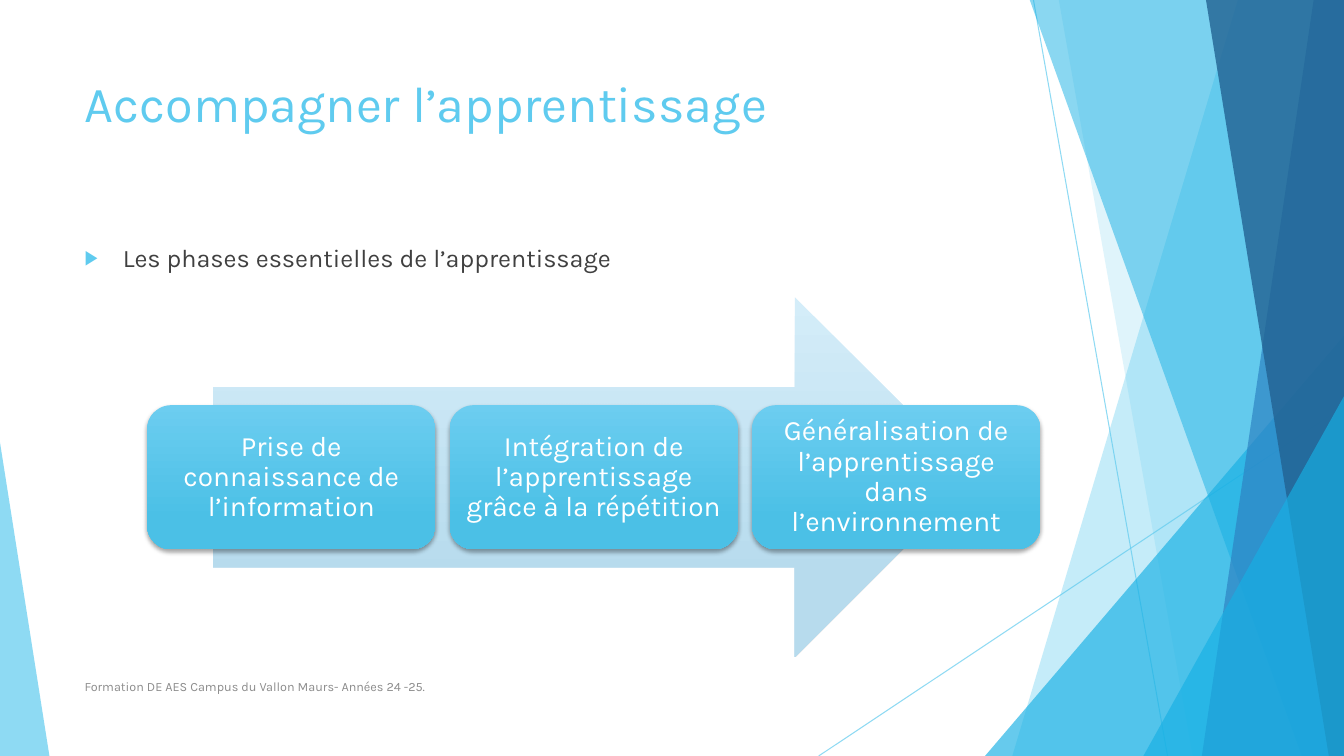
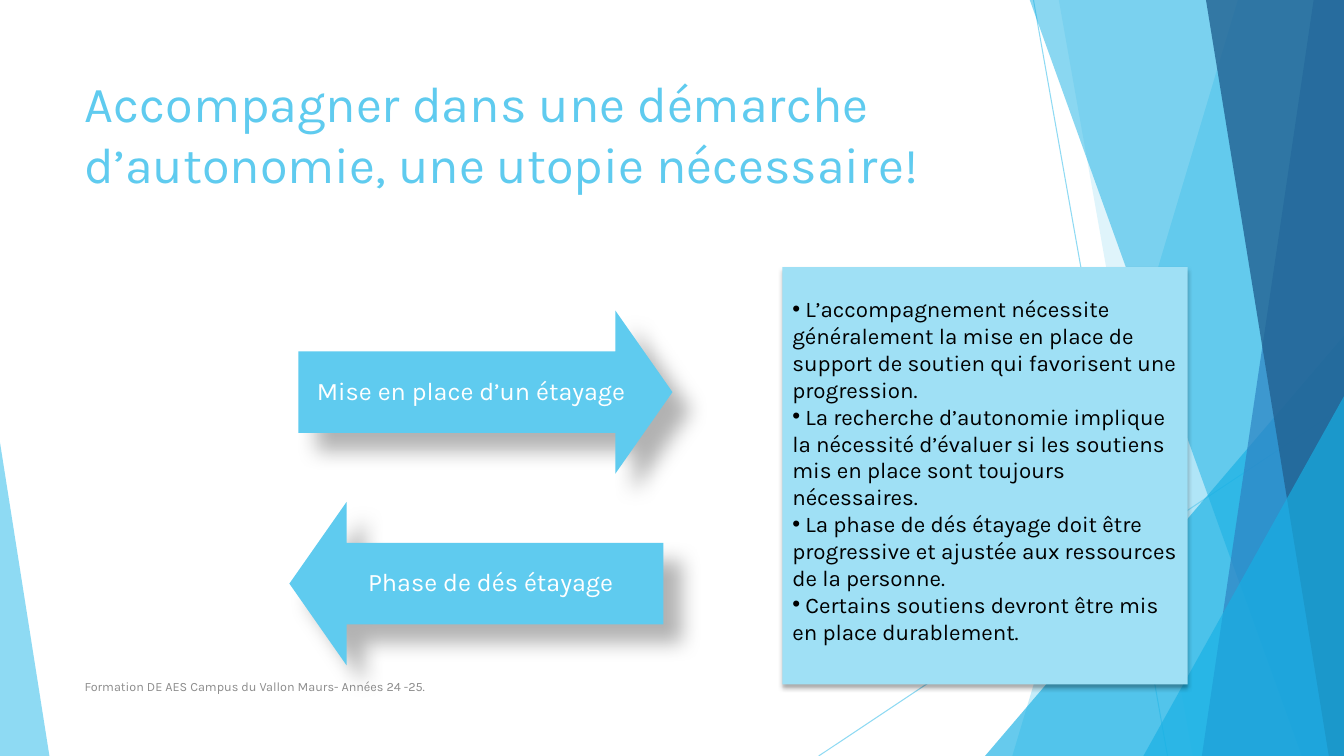
from dataclasses import dataclass
from typing import Optional, Union

import lxml.etree
import pptx
import pptx.dml.color
import pptx.enum.shapes
import pptx.enum.text
import pptx.oxml.ns
import pptx.util

Inches = pptx.util.Inches
qn = pptx.oxml.ns.qn
SHAPES = pptx.enum.shapes.MSO_SHAPE
ANCHOR = pptx.enum.text.MSO_ANCHOR
ALIGN = pptx.enum.text.PP_ALIGN

PAGE_WIDTH, PAGE_HEIGHT = 13.33, 7.5
MARGIN = 0.74
FONT = "Karla"
SKY, CYAN, BLUE, NAVY = "5FCBEF", "17B0E4", "2E83C3", "226292"
PALE, WHITE, BLACK, DARK, GREY = "9FE0F5", "FFFFFF", "000000", "404040", "8C8C8C"
FOOTER = "Formation DE AES Campus du Vallon Maurs- Années 24 -25."


@dataclass(frozen=True)
class Band:
    """Slanted band that runs to the right edge of the page."""
    top_left: float
    bottom_left: float
    colour: str
    opacity: int


@dataclass(frozen=True)
class Corner:
    """Right triangle standing on the bottom edge of the page."""
    left: float
    width: float
    height: float
    apex: float
    colour: str
    opacity: int


@dataclass(frozen=True)
class Shadow:
    opacity: int
    blur: float
    distance: float
    angle: int


@dataclass(frozen=True)
class Bullet:
    symbol: str
    colour: Optional[str] = None
    percent: int = 100
    hanging: float = 0


@dataclass(frozen=True)
class Arrow:
    text: str
    kind: pptx.enum.shapes.MSO_SHAPE
    left: float
    top: float


THIN_LINES = [(10.25, 0, 11.58, 7.5), (13.33, 4.03, 8.12, 7.5)]
FACETS: list[Union[Band, Corner]] = [
    Band(12.28, 10.04, SKY, 36),
    Band(10.5, 11.83, SKY, 20),
    Corner(9.77, 3.56, 4.17, 1, CYAN, 66),
    Band(10.21, 12.91, CYAN, 50),
    Band(13.03, 11.92, BLUE, 70),
    Band(11.96, 13.18, NAVY, 80),
    Corner(11.34, 1.99, 3.57, 1, CYAN, 66),
    Corner(0, 0.49, 3.11, 0, SKY, 70),
]
CARD_SHADOW = Shadow(35, 3, 2, 90)
ARROW_SHADOW = Shadow(30, 15, 18, 45)
NOTE_SHADOW = Shadow(32, 3.5, 2.2, 90)

PHASES = [
    "Prise de connaissance de l’information",
    "Intégration de l’apprentissage grâce à la répétition",
    "Généralisation de l’apprentissage dans l’environnement",
]
SUPPORT_ARROWS = [
    Arrow("Mise en place d’un étayage", SHAPES.RIGHT_ARROW, 2.96, 3.08),
    Arrow("Phase de dés étayage", SHAPES.LEFT_ARROW, 2.87, 4.98),
]
NOTES = [
    " L’accompagnement nécessite généralement la mise en place de support de soutien "
    "qui favorisent une progression.",
    " La recherche d’autonomie implique la nécessité d’évaluer si les soutiens mis en "
    "place sont toujours nécessaires.",
    " La phase de dés étayage doit être progressive et ajustée aux ressources de la personne.",
    " Certains soutiens devront être mis en place durablement.",
]


def rgb(colour: str) -> pptx.dml.color.RGBColor:
    return pptx.dml.color.RGBColor.from_string(colour)


def set_opacity(properties, percent: int) -> None:
    for colour in properties.iter(qn("a:srgbClr")):
        lxml.etree.SubElement(colour, qn("a:alpha"), val=str(percent * 1000))


def add_shadow(shape, shadow: Shadow) -> None:
    effects = shape.element.spPr.find(qn("a:effectLst"))
    outer = lxml.etree.SubElement(
        effects, qn("a:outerShdw"),
        blurRad=str(int(pptx.util.Pt(shadow.blur))),
        dist=str(int(pptx.util.Pt(shadow.distance))),
        dir=str(shadow.angle * 60000), algn="tl", rotWithShape="0")
    lxml.etree.SubElement(outer, qn("a:srgbClr"), val=BLACK)
    set_opacity(outer, shadow.opacity)


def style_shape(shape, fill: Union[str, tuple[str, str]], opacity: int = 100,
                shadow: Optional[Shadow] = None) -> None:
    """Fill a shape with one colour, or a pair as a downward gradient, without outline."""
    shape.line.fill.background()
    shape.shadow.inherit = False
    if isinstance(fill, str):
        shape.fill.solid()
        shape.fill.fore_color.rgb = rgb(fill)
    else:
        shape.fill.gradient()
        shape.fill.gradient_angle = 270
        for stop, colour, position in zip(shape.fill.gradient_stops, fill, (0, 0.78)):
            stop.color.rgb = rgb(colour)
            stop.position = position
    if opacity < 100:
        set_opacity(shape.element.spPr, opacity)
    if shadow:
        add_shadow(shape, shadow)


def add_preset(page, kind, left: float, top: float, width: float, height: float,
               fill: Union[str, tuple[str, str]], **style):
    shape = page.shapes.add_shape(
        kind, Inches(left), Inches(top), Inches(width), Inches(height))
    style_shape(shape, fill, **style)
    return shape


def add_bullet(para, bullet: Bullet) -> None:
    properties = para._p.get_or_add_pPr()
    properties.set("marL", str(int(Inches(bullet.hanging))))
    properties.set("indent", str(-int(Inches(bullet.hanging))))
    if bullet.colour:
        holder = lxml.etree.SubElement(properties, qn("a:buClr"))
        lxml.etree.SubElement(holder, qn("a:srgbClr"), val=bullet.colour)
    lxml.etree.SubElement(properties, qn("a:buSzPct"), val=str(bullet.percent * 1000))
    lxml.etree.SubElement(properties, qn("a:buFont"), typeface="Arial")
    lxml.etree.SubElement(properties, qn("a:buChar"), char=bullet.symbol)


def write(shape, *texts: str, size: float, colour: str, align=ALIGN.LEFT,
          anchor=ANCHOR.TOP, spacing: float = 1.0, bullet: Optional[Bullet] = None,
          insets: tuple[float, float, float, float] = (0.1, 0.05, 0.1, 0.05)) -> None:
    """Write one paragraph per text; insets are left, top, right, bottom."""
    frame = shape.text_frame
    frame.word_wrap = True
    frame.vertical_anchor = anchor
    (frame.margin_left, frame.margin_top,
     frame.margin_right, frame.margin_bottom) = map(Inches, insets)
    for index, text in enumerate(texts):
        para = frame.add_paragraph() if index else frame.paragraphs[0]
        para.alignment = align
        para.line_spacing = spacing
        if bullet:
            add_bullet(para, bullet)
        span = para.add_run()
        span.text = text
        span.font.name = FONT
        span.font.size = pptx.util.Pt(size)
        span.font.color.rgb = rgb(colour)


def add_text(page, text: str, left: float, top: float, width: float, height: float,
             **text_format) -> None:
    box = page.shapes.add_textbox(Inches(left), Inches(top), Inches(width), Inches(height))
    write(box, text, **text_format)


def add_thin_line(page, x1: float, y1: float, x2: float, y2: float) -> None:
    line = page.shapes.add_connector(
        pptx.enum.shapes.MSO_CONNECTOR.STRAIGHT,
        Inches(x1), Inches(y1), Inches(x2), Inches(y2))
    line.line.color.rgb = rgb(SKY)
    line.line.width = pptx.util.Pt(0.75)
    set_opacity(line.element.spPr, 70)
    lxml.etree.SubElement(line.element.spPr, qn("a:effectLst"))


def add_facet(page, facet: Union[Band, Corner]) -> None:
    if isinstance(facet, Corner):
        triangle = add_preset(
            page, SHAPES.ISOSCELES_TRIANGLE, facet.left, PAGE_HEIGHT - facet.height,
            facet.width, facet.height, facet.colour, opacity=facet.opacity)
        triangle.adjustments[0] = facet.apex
        return
    outline = page.shapes.build_freeform(Inches(facet.top_left), Inches(-0.01))
    outline.add_line_segments([
        (Inches(PAGE_WIDTH), Inches(-0.01)),
        (Inches(PAGE_WIDTH), Inches(PAGE_HEIGHT)),
        (Inches(facet.bottom_left), Inches(PAGE_HEIGHT)),
    ], close=True)
    style_shape(outline.convert_to_shape(), facet.colour, opacity=facet.opacity)


def add_page(deck, title: str):
    """Add a page with the shared decoration, title and footer."""
    page = deck.slides.add_slide(deck.slide_layouts[6])
    for ends in THIN_LINES:
        add_thin_line(page, *ends)
    for facet in FACETS:
        add_facet(page, facet)
    add_text(page, title, MARGIN, 0.67, 9.4, 1.44, size=36, colour=SKY)
    add_text(page, FOOTER, MARGIN, 6.61, 6.89, 0.4, size=9, colour=GREY,
             anchor=ANCHOR.MIDDLE)
    return page


def add_phases_page(deck) -> None:
    page = add_page(deck, "Accompagner l’apprentissage")
    add_text(page, "Les phases essentielles de l’apprentissage", MARGIN, 2.36, 9.4, 0.5,
             size=18, colour=DARK, bullet=Bullet("▶", SKY, 80, 0.38))
    add_preset(page, SHAPES.RIGHT_ARROW, 2.11, 2.95, 7.56, 3.57, ("D4EDF9", "B7DBED"))
    for index, phase in enumerate(PHASES):
        card = add_preset(page, SHAPES.ROUNDED_RECTANGLE, 1.46 + 3 * index, 4.02, 2.86, 1.43,
                          ("6CCDF0", "4BC0E6"), shadow=CARD_SHADOW)
        write(card, phase, size=20, colour=WHITE, align=ALIGN.CENTER,
              anchor=ANCHOR.MIDDLE, spacing=0.9, insets=(0.08,) * 4)


def add_autonomy_page(deck) -> None:
    page = add_page(deck, "Accompagner dans une démarche d’autonomie, une utopie nécessaire!")
    for arrow in SUPPORT_ARROWS:
        shape = add_preset(page, arrow.kind, arrow.left, arrow.top, 3.71, 1.62, SKY,
                           shadow=ARROW_SHADOW)
        shape.adjustments[1] = 0.35
        write(shape, arrow.text, size=18, colour=WHITE, align=ALIGN.CENTER,
              anchor=ANCHOR.MIDDLE, spacing=0.9, insets=(0.14,) * 4)
    note = add_preset(page, SHAPES.RECTANGLE, 7.76, 2.65, 4.02, 4.14, PALE,
                      shadow=NOTE_SHADOW)
    write(note, *NOTES, size=16, colour=BLACK, bullet=Bullet("•"),
          insets=(0.1, 0.28, 0.1, 0.05))


def main() -> None:
    deck = pptx.Presentation()
    deck.slide_width, deck.slide_height = Inches(PAGE_WIDTH), Inches(PAGE_HEIGHT)
    add_phases_page(deck)
    add_autonomy_page(deck)
    deck.save("out.pptx")


if __name__ == "__main__":
    main()
